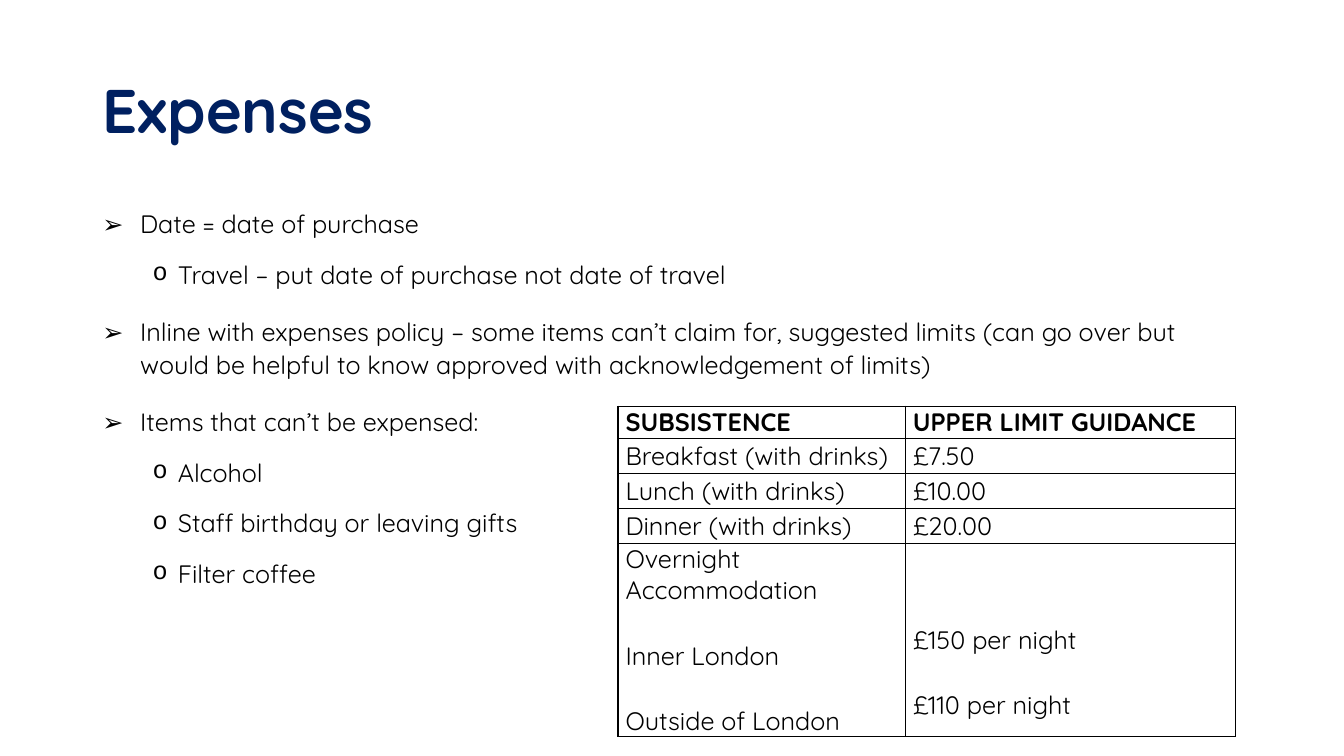
from dataclasses import dataclass

from lxml import etree
from pptx import Presentation
from pptx.dml.color import RGBColor
from pptx.enum.text import MSO_ANCHOR, MSO_AUTO_SIZE, PP_ALIGN
from pptx.oxml.ns import qn
from pptx.slide import Slide
from pptx.table import _Cell
from pptx.util import Pt

LEFT = PP_ALIGN.LEFT
MIDDLE = MSO_ANCHOR.MIDDLE
NO_AUTOFIT = MSO_AUTO_SIZE.NONE
FONT = "Quicksand"
NAVY = "002060"
BLACK = "000000"
TEXT_SIZE = 18
LINE_HEIGHT = 22.5
CELL_SPACING = 12
CONTENT_LEFT = 66
CONTENT_WIDTH = 828


@dataclass(frozen=True)
class BulletStyle:
    character: str
    font: str
    margin: float
    hanging: float
    space_before: float


@dataclass(frozen=True)
class Bullet:
    text: str
    style: BulletStyle


@dataclass(frozen=True)
class LimitRow:
    item: str
    limit: str
    height: float
    bold: bool = False
    limit_top_inset: float = 0


POINT = BulletStyle("➢", FONT, 27, 27, 10)
DETAIL = BulletStyle("o", "Courier New", 54, 18, 5)

BULLETS = [
    Bullet("Date = date of purchase", POINT),
    Bullet("Travel – put date of purchase not date of travel", DETAIL),
    Bullet(
        "Inline with expenses policy – some items can’t claim for, suggested limits "
        "(can go over but would be helpful to know approved with acknowledgement of limits)",
        POINT,
    ),
    Bullet("Items that can’t be expensed:", POINT),
    Bullet("Alcohol", DETAIL),
    Bullet("Staff birthday or leaving gifts", DETAIL),
    Bullet("Filter coffee", DETAIL),
]

COLUMN_WIDTHS = [205.2, 236.2]
LIMIT_ROWS = [
    LimitRow("SUBSISTENCE", "UPPER LIMIT GUIDANCE", 22.9, bold=True),
    LimitRow("Breakfast (with drinks)", "£7.50", 25),
    LimitRow("Lunch (with drinks)", "£10.00", 25),
    LimitRow("Dinner (with drinks)", "£20.00", 25),
    LimitRow(
        "Overnight Accommodation\nInner London\nOutside of London",
        "£150 per night\n£110 per night",
        138,
        limit_top_inset=LINE_HEIGHT + 2 * CELL_SPACING,
    ),
]


def colour(value: str) -> RGBColor:
    return RGBColor.from_string(value)


def format_runs(paragraph, size: float, fill: str, bold: bool = False) -> None:
    for run in paragraph.runs:
        run.font.name = FONT
        run.font.size = Pt(size)
        run.font.bold = bold
        run.font.color.rgb = colour(fill)


def add_title(slide: Slide, text: str) -> None:
    title = slide.shapes.title
    title.left, title.top = Pt(CONTENT_LEFT), Pt(28.8)
    title.width, title.height = Pt(CONTENT_WIDTH), Pt(104.4)
    frame = title.text_frame
    frame.text = text
    frame.word_wrap = True
    frame.auto_size = NO_AUTOFIT
    frame.vertical_anchor = MIDDLE
    paragraph = frame.paragraphs[0]
    paragraph.alignment = LEFT
    paragraph.line_spacing = 0.9
    format_runs(paragraph, 44, NAVY, bold=True)


def set_bullet(paragraph, style: BulletStyle) -> None:
    properties = paragraph._p.get_or_add_pPr()
    properties.set("marL", str(Pt(style.margin)))
    properties.set("indent", str(-Pt(style.hanging)))
    etree.SubElement(properties, qn("a:buFont"), typeface=style.font)
    etree.SubElement(properties, qn("a:buChar"), char=style.character)


def add_bullets(slide: Slide, bullets: list[Bullet]) -> None:
    box = slide.shapes.add_textbox(Pt(CONTENT_LEFT), Pt(144), Pt(CONTENT_WIDTH), Pt(342.7))
    frame = box.text_frame
    frame.word_wrap = True
    frame.text = "\n".join(bullet.text for bullet in bullets)
    for paragraph, bullet in zip(frame.paragraphs, bullets):
        paragraph.level = 1 if bullet.style is DETAIL else 0
        paragraph.line_spacing = 1.07
        paragraph.space_before = Pt(bullet.style.space_before)
        paragraph.space_after = Pt(8)
        set_bullet(paragraph, bullet.style)
        format_runs(paragraph, TEXT_SIZE, BLACK)


def set_borders(cell: _Cell) -> None:
    properties = cell._tc.get_or_add_tcPr()
    for side in ("lnL", "lnR", "lnT", "lnB"):
        line = etree.SubElement(properties, qn(f"a:{side}"), w=str(Pt(1)))
        fill = etree.SubElement(line, qn("a:solidFill"))
        etree.SubElement(fill, qn("a:srgbClr"), val=BLACK)


def fill_cell(cell: _Cell, text: str, bold: bool, top_inset: float) -> None:
    cell.text = text
    cell.vertical_anchor = MIDDLE
    cell.margin_left = cell.margin_right = Pt(5.4)
    cell.margin_top, cell.margin_bottom = Pt(top_inset), Pt(0)
    set_borders(cell)
    cell.fill.background()
    for paragraph in cell.text_frame.paragraphs:
        paragraph.space_before = paragraph.space_after = Pt(CELL_SPACING)
        format_runs(paragraph, TEXT_SIZE, BLACK, bold)


def add_limits_table(slide: Slide, rows: list[LimitRow]) -> None:
    height = sum(row.height for row in rows)
    frame = slide.shapes.add_table(
        len(rows), len(COLUMN_WIDTHS), Pt(441.4), Pt(290.2), Pt(sum(COLUMN_WIDTHS)), Pt(height)
    )
    table = frame.table
    table.first_row = table.horz_banding = False
    for column, width in zip(table.columns, COLUMN_WIDTHS):
        column.width = Pt(width)
    for index, row in enumerate(rows):
        table.rows[index].height = Pt(row.height)
        fill_cell(table.cell(index, 0), row.item, row.bold, 0)
        fill_cell(table.cell(index, 1), row.limit, row.bold, row.limit_top_inset)


def main() -> None:
    presentation = Presentation()
    presentation.slide_width, presentation.slide_height = Pt(960), Pt(540)
    slide = presentation.slides.add_slide(presentation.slide_layouts[5])
    add_title(slide, "Expenses")
    add_bullets(slide, BULLETS)
    add_limits_table(slide, LIMIT_ROWS)
    presentation.save("out.pptx")


if __name__ == "__main__":
    main()
